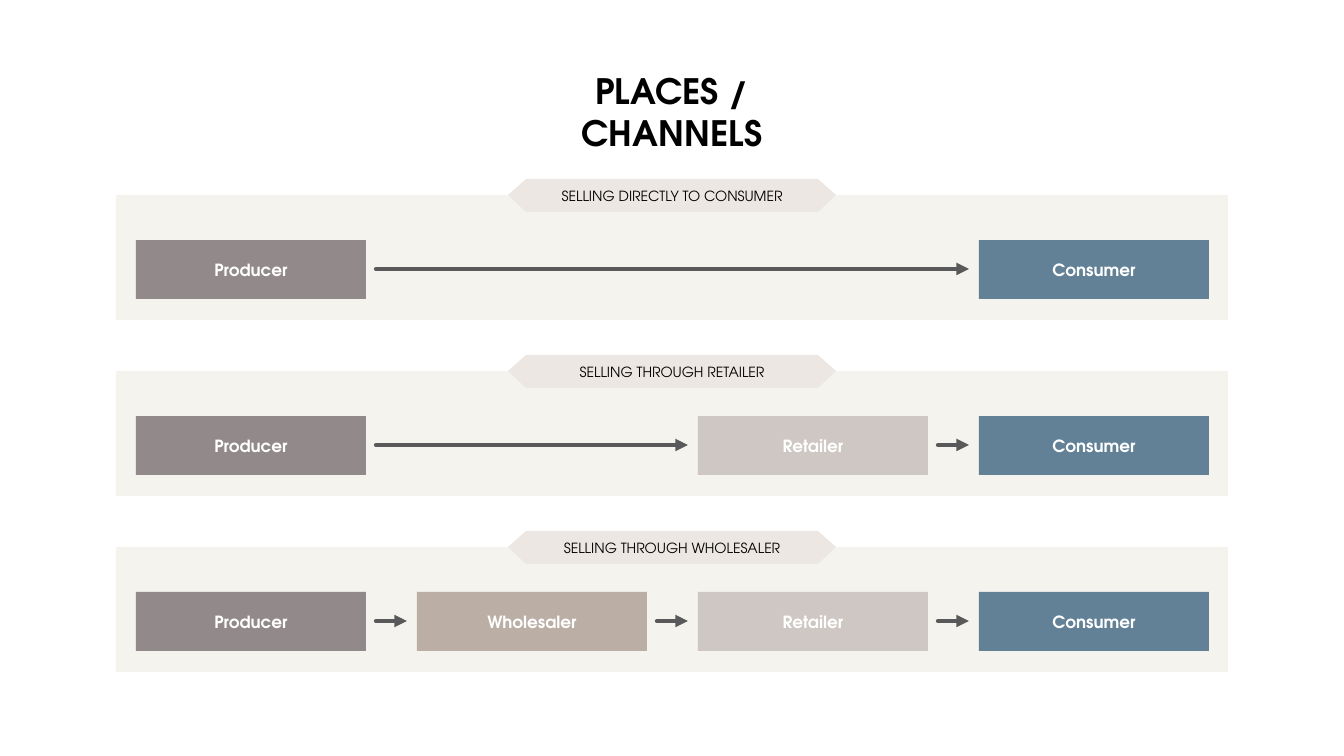
from dataclasses import dataclass
from itertools import pairwise

from lxml.etree import SubElement
from pptx import Presentation
from pptx.dml.color import RGBColor as RGB
from pptx.enum.shapes import MSO_CONNECTOR as Connector, MSO_SHAPE as Preset
from pptx.enum.text import MSO_ANCHOR as Anchor, MSO_AUTO_SIZE as AutoSize, PP_ALIGN as Align
from pptx.oxml.ns import qn
from pptx.util import Emu, Pt

PX_PER_INCH = 100.8
SLIDE_W, SLIDE_H = 1344, 756
PANEL_X, PANEL_Y, PANEL_W, PANEL_H, PANEL_PITCH = 116, 195, 1112, 125, 176
STAGE_X, STAGE_DY, STAGE_W, STAGE_H, STAGE_PITCH = 136, 45, 230, 59, 281
BANNER_W, BANNER_H, BANNER_POINT = 328, 33, 18
ARROW_GAP = 10


@dataclass(frozen=True)
class Theme:
    font: str = "TeX Gyre Adventor"
    title_size: int = 25
    banner_size: int = 10
    stage_size: int = 12
    arrow_width: int = 3
    ink: str = "000000"
    stage_ink: str = "FFFFFF"
    panel: str = "F4F3EE"
    banner: str = "ECE7E3"
    arrow: str = "595959"


THEME = Theme()
STAGES = {
    "Producer": (0, "92898A"),
    "Wholesaler": (1, "BBAEA5"),
    "Retailer": (2, "CFC7C3"),
    "Consumer": (3, "628196"),
}
CHANNELS = [
    ("SELLING DIRECTLY TO CONSUMER", ["Producer", "Consumer"]),
    ("SELLING THROUGH RETAILER", ["Producer", "Retailer", "Consumer"]),
    ("SELLING THROUGH WHOLESALER", ["Producer", "Wholesaler", "Retailer", "Consumer"]),
]


def px(length):
    return Emu(round(length * 914400 / PX_PER_INCH))


def write(shape, text, *, size, color, bold=False, anchor=Anchor.MIDDLE):
    frame = shape.text_frame
    frame.vertical_anchor = anchor
    paragraph = frame.paragraphs[0]
    paragraph.alignment = Align.CENTER
    run = paragraph.add_run()
    run.text = text
    font = run.font
    font.name, font.size, font.bold = THEME.font, Pt(size), bold
    font.color.rgb = RGB.from_string(color)


def paint(shape, color):
    shape.shadow.inherit = False
    shape.fill.solid()
    shape.fill.fore_color.rgb = RGB.from_string(color)
    shape.line.fill.background()
    return shape


def add_block(slide, x, y, width, height, color):
    block = slide.shapes.add_shape(Preset.RECTANGLE, px(x), px(y), px(width), px(height))
    return paint(block, color)


def add_title(slide, text):
    title = slide.shapes.add_textbox(px(490), px(65), px(364), px(52))
    title.text_frame.word_wrap = False
    title.text_frame.auto_size = AutoSize.SHAPE_TO_FIT_TEXT
    write(title, text, size=THEME.title_size, color=THEME.ink, bold=True, anchor=Anchor.TOP)


def add_banner(slide, text, middle):
    left, top = (SLIDE_W - BANNER_W) // 2, middle - BANNER_H // 2
    right, bottom = left + BANNER_W, top + BANNER_H
    corners = [
        (left + BANNER_POINT, top), (right - BANNER_POINT, top), (right, middle),
        (right - BANNER_POINT, bottom), (left + BANNER_POINT, bottom), (left, middle),
    ]
    start, *others = [(px(x), px(y)) for x, y in corners]
    outline = slide.shapes.build_freeform(*start)
    outline.add_line_segments(others, close=True)
    banner = paint(outline.convert_to_shape(), THEME.banner)
    write(banner, text, size=THEME.banner_size, color=THEME.ink)


def stage_left(name):
    return STAGE_X + STAGES[name][0] * STAGE_PITCH


def add_stage(slide, name, top):
    stage = add_block(slide, stage_left(name), top, STAGE_W, STAGE_H, STAGES[name][1])
    write(stage, name, size=THEME.stage_size, color=THEME.stage_ink, bold=True)


def add_arrow(slide, source, target, y):
    start = stage_left(source) + STAGE_W + ARROW_GAP
    end = stage_left(target) - ARROW_GAP
    arrow = slide.shapes.add_connector(Connector.STRAIGHT, px(start), px(y), px(end), px(y))
    arrow.line.width = Pt(THEME.arrow_width)
    arrow.line.color.rgb = RGB.from_string(THEME.arrow)
    stroke = arrow.line._get_or_add_ln()
    stroke.set("cap", "rnd")
    SubElement(stroke, qn("a:round"))
    SubElement(stroke, qn("a:tailEnd"), type="triangle")
    SubElement(arrow._element.spPr, qn("a:effectLst"))


def add_channel(slide, label, stages, top):
    add_block(slide, PANEL_X, top, PANEL_W, PANEL_H, THEME.panel)
    add_banner(slide, label, top)
    stage_top = top + STAGE_DY
    for name in stages:
        add_stage(slide, name, stage_top)
    for source, target in pairwise(stages):
        add_arrow(slide, source, target, stage_top + STAGE_H // 2)


def main():
    deck = Presentation()
    deck.slide_width, deck.slide_height = px(SLIDE_W), px(SLIDE_H)
    slide = deck.slides.add_slide(deck.slide_layouts[6])
    add_title(slide, "PLACES / CHANNELS")
    for row, (label, stages) in enumerate(CHANNELS):
        add_channel(slide, label, stages, PANEL_Y + row * PANEL_PITCH)
    deck.save("out.pptx")


if __name__ == "__main__":
    main()
